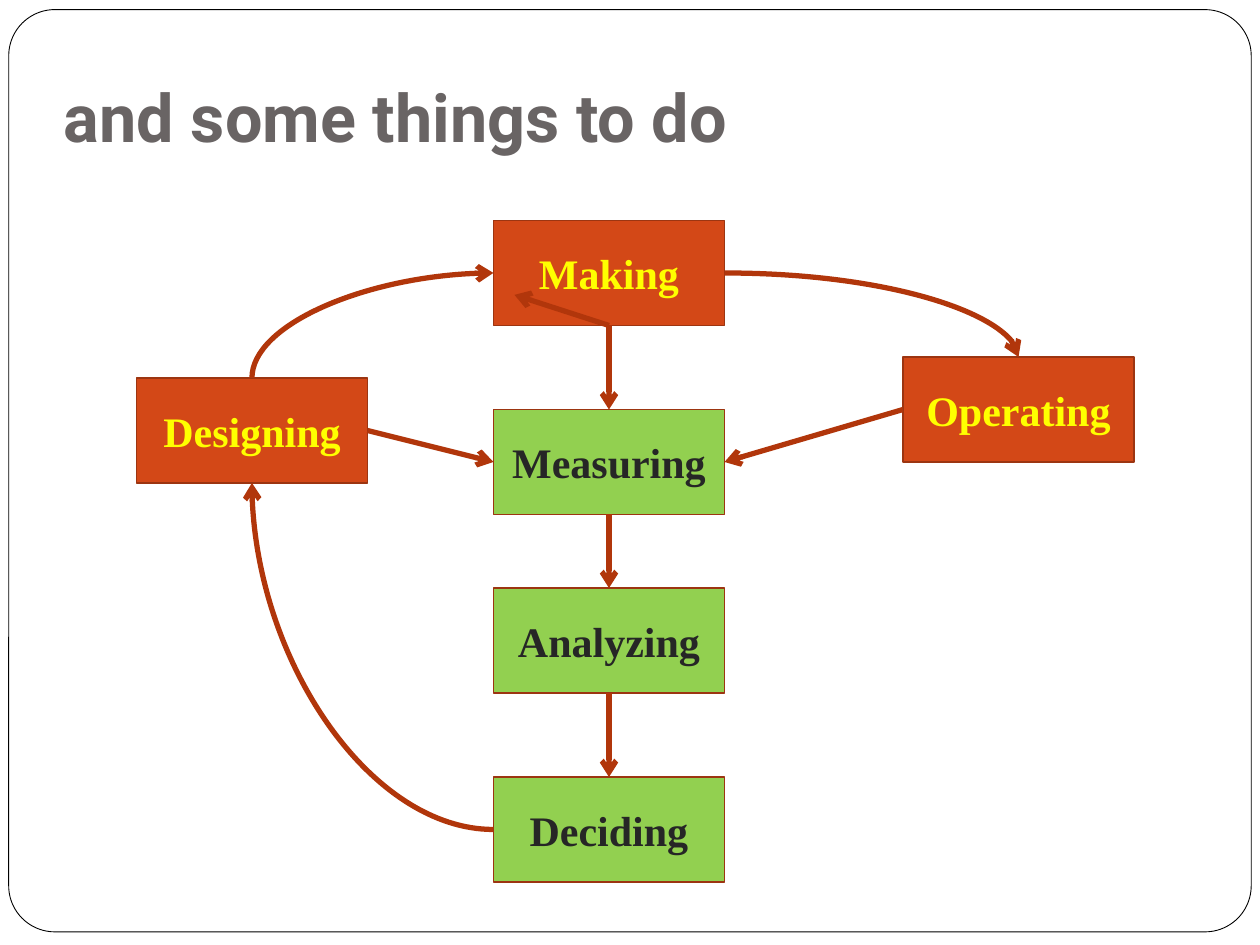
from lxml import etree
from pptx import Presentation
from pptx.dml.color import RGBColor
from pptx.enum.shapes import MSO_CONNECTOR, MSO_SHAPE
from pptx.enum.text import MSO_ANCHOR, PP_ALIGN
from pptx.oxml.ns import qn
from pptx.util import Pt

STRAIGHT, CURVE = MSO_CONNECTOR.STRAIGHT, MSO_CONNECTOR.CURVE
RECTANGLE, ROUNDED = MSO_SHAPE.RECTANGLE, MSO_SHAPE.ROUNDED_RECTANGLE
MIDDLE, BOTTOM = MSO_ANCHOR.MIDDLE, MSO_ANCHOR.BOTTOM
LEFT, CENTER = PP_ALIGN.LEFT, PP_ALIGN.CENTER

WHITE = RGBColor(0xFF, 0xFF, 0xFF)
BLACK = RGBColor(0x00, 0x00, 0x00)
GRAY = RGBColor(0x69, 0x64, 0x64)
DARK = RGBColor(0x26, 0x26, 0x26)
ORANGE = RGBColor(0xD3, 0x48, 0x17)
LIME = RGBColor(0x92, 0xD0, 0x50)
YELLOW = RGBColor(0xFF, 0xFF, 0x00)
OUTLINE = RGBColor(0x9C, 0x35, 0x11)
ARROW = RGBColor(0xB1, 0x36, 0x0B)

TITLE = "and some things to do"
TITLE_FONT, BODY_FONT = "Roboto", "Times New Roman"

# Name, left, top, fill, text colour
STEP_WIDTH, STEP_HEIGHT = 132, 60
STEPS = [
    ("Designing", 78, 216, ORANGE, YELLOW),
    ("Making", 282, 126, ORANGE, YELLOW),
    ("Operating", 516, 204, ORANGE, YELLOW),
    ("Measuring", 282, 234, LIME, DARK),
    ("Analyzing", 282, 336, LIME, DARK),
    ("Deciding", 282, 444, LIME, DARK),
]

# Connection sites of a rectangle
TOP_SITE, LEFT_SITE, BOTTOM_SITE, RIGHT_SITE = range(4)
ARROWS = [
    (STRAIGHT, "Making", BOTTOM_SITE, "Measuring", TOP_SITE),
    (STRAIGHT, "Designing", RIGHT_SITE, "Measuring", LEFT_SITE),
    (STRAIGHT, "Analyzing", BOTTOM_SITE, "Deciding", TOP_SITE),
    (STRAIGHT, "Measuring", BOTTOM_SITE, "Analyzing", TOP_SITE),
    (STRAIGHT, "Operating", LEFT_SITE, "Measuring", RIGHT_SITE),
    (CURVE, "Designing", TOP_SITE, "Making", LEFT_SITE),
    (CURVE, "Deciding", LEFT_SITE, "Designing", BOTTOM_SITE),
    (CURVE, "Making", RIGHT_SITE, "Operating", TOP_SITE),
]
LOOSE_END = (294, 168.5)


def write(shape, text, size, font, color, align, anchor):
    frame = shape.text_frame
    frame.word_wrap = True
    frame.vertical_anchor = anchor
    para = frame.paragraphs[0]
    para.alignment = align
    span = para.add_run()
    span.text = text
    span.font.size = Pt(size)
    span.font.name = font
    span.font.bold = True
    span.font.color.rgb = color


def add_block(shapes, kind, left, top, width, height, fill, line, weight):
    block = shapes.add_shape(kind, Pt(left), Pt(top), Pt(width), Pt(height))
    block.shadow.inherit = False
    block.fill.solid()
    block.fill.fore_color.rgb = fill
    block.line.color.rgb = line
    block.line.width = Pt(weight)
    return block


def add_arrow(shapes, kind, start, start_site, end=None, end_site=None):
    """Join two steps; without an end step, point at LOOSE_END."""
    arrow = shapes.add_connector(kind, 0, 0, *map(Pt, LOOSE_END))
    arrow.begin_connect(start, start_site)
    if end is not None:
        arrow.end_connect(end, end_site)
    arrow.line.color.rgb = ARROW
    arrow.line.width = Pt(3)
    properties = arrow._element.spPr
    outline = properties.find(qn("a:ln"))
    etree.SubElement(outline, qn("a:tailEnd"), type="arrow")
    etree.SubElement(properties, qn("a:effectLst"))
    if kind == CURVE:
        properties.find(qn("a:prstGeom")).set("prst", "curvedConnector2")
        if start_site == TOP_SITE:
            turn_upward(arrow)


def turn_upward(arrow):
    """Make a single-bend curve leave vertically: a quarter turn about its centre."""
    width, height = arrow.width, arrow.height
    shift = (width - height) // 2
    arrow.left, arrow.top = arrow.left + shift, arrow.top - shift
    arrow.width, arrow.height = height, width
    transform = arrow._element.spPr.find(qn("a:xfrm"))
    for name, value in (("rot", "5400000"), ("flipH", "1"), ("flipV", "1")):
        transform.set(name, value)


def main():
    deck = Presentation()
    deck.slide_width, deck.slide_height = Pt(720), Pt(540)
    page = deck.slides.add_slide(deck.slide_layouts[6])
    shapes = page.shapes

    border = add_block(shapes, ROUNDED, 5, 5.5, 710, 527, WHITE, BLACK, 0.5)
    border.adjustments[0] = 0.05

    title = shapes.add_textbox(Pt(29.5), Pt(6), Pt(750), Pt(90))
    title.text_frame.margin_bottom = Pt(7.2)
    write(title, TITLE, 38, TITLE_FONT, GRAY, LEFT, BOTTOM)

    steps = {}
    for name, left, top, fill, color in STEPS:
        steps[name] = add_block(shapes, RECTANGLE, left, top, STEP_WIDTH,
                                STEP_HEIGHT, fill, OUTLINE, 1)
        write(steps[name], name, 24, BODY_FONT, color, CENTER, MIDDLE)

    add_arrow(shapes, STRAIGHT, steps["Making"], BOTTOM_SITE)
    for kind, start, start_site, end, end_site in ARROWS:
        add_arrow(shapes, kind, steps[start], start_site, steps[end], end_site)

    deck.save("out.pptx")


if __name__ == "__main__":
    main()
